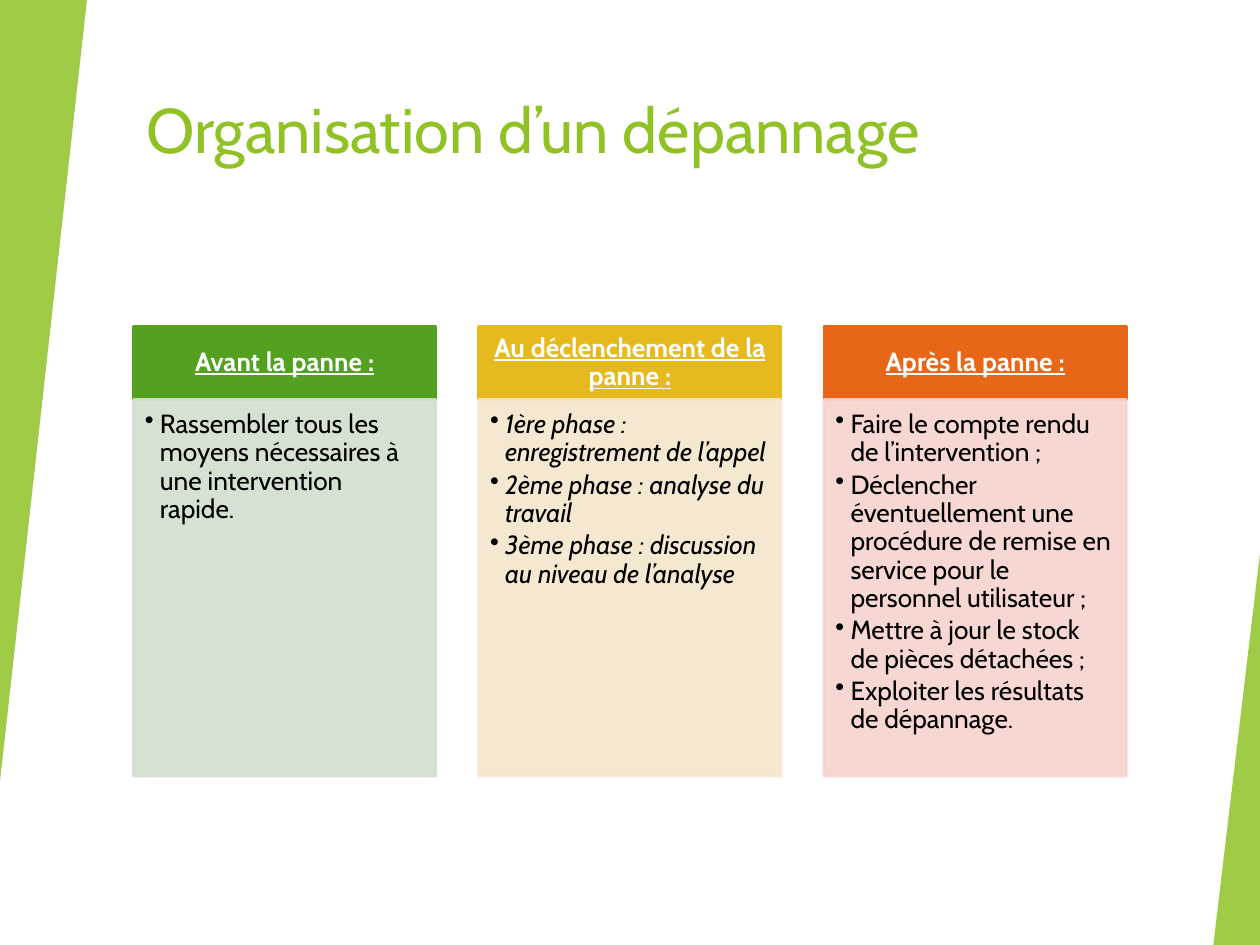
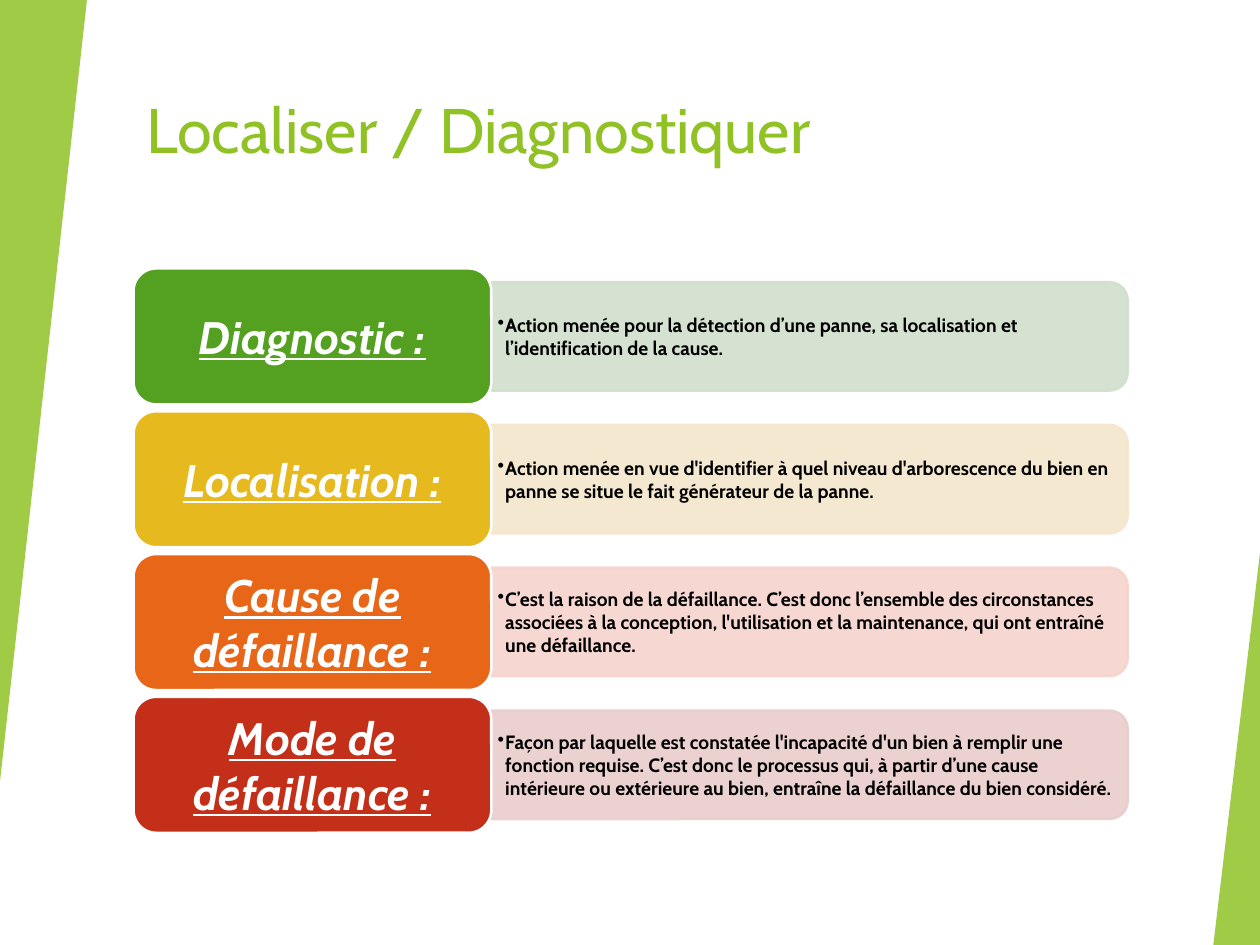
from dataclasses import dataclass

from lxml import etree
from pptx import Presentation
from pptx import util as u
from pptx.dml import color
from pptx.enum import shapes, text
from pptx.oxml import ns

KIND = shapes.MSO_SHAPE
ALIGN = text.PP_ALIGN
ANCHOR = text.MSO_ANCHOR


@dataclass(frozen=True)
class Theme:
    font: str = "Cabin"
    lime: str = "90C226"
    white: str = "FFFFFF"
    black: str = "000000"
    darks: tuple = ("54A021", "E6B91E", "E76618", "C42F1A")
    pales: tuple = ("D1DFCD", "F5E6CD", "F6D3CC", "EACDCD")
    title: int = 36
    card: int = 15
    term: int = 26
    note: int = 11
    edge: float = 1.5


T = Theme()

CARDS = [
    ("Avant la panne :", False,
     ["Rassembler tous les moyens nécessaires à une intervention rapide."]),
    ("Au déclenchement de la panne :", True,
     ["1ère phase : enregistrement de l’appel",
      "2ème phase : analyse du travail",
      "3ème phase : discussion au niveau de l’analyse"]),
    ("Après la panne :", False,
     ["Faire le compte rendu de l’intervention ;",
      "Déclencher éventuellement une procédure de remise en service "
      "pour le personnel utilisateur ;",
      "Mettre à jour le stock de pièces détachées ;",
      "Exploiter les résultats de dépannage."]),
]

TERMS = [
    ("Diagnostic :",
     "Action menée pour la détection d’une panne, sa localisation et "
     "l’identification de la cause."),
    ("Localisation :",
     "Action menée en vue d'identifier à quel niveau d'arborescence du bien "
     "en panne se situe le fait générateur de la panne."),
    ("Cause de défaillance :",
     "C’est la raison de la défaillance. C’est donc l’ensemble des "
     "circonstances associées à la conception, l'utilisation et la "
     "maintenance, qui ont entraîné une défaillance."),
    ("Mode de défaillance :",
     "Façon par laquelle est constatée l'incapacité d'un bien à remplir une "
     "fonction requise. C’est donc le processus qui, à partir d’une cause "
     "intérieure ou extérieure au bien, entraîne la défaillance du bien "
     "considéré."),
]


def place(box):
    return [u.Inches(v) for v in box]


def fade(fill, alpha):
    for clr in fill.iter(ns.qn("a:srgbClr")):
        etree.SubElement(clr, ns.qn("a:alpha"), val=str(alpha * 1000))


def draw(slide, kind, box, fill, line=None, alpha=None):
    shape = slide.shapes.add_shape(kind, *place(box))
    shape.shadow.inherit = False
    shape.fill.solid()
    shape.fill.fore_color.rgb = color.RGBColor.from_string(fill)
    if line:
        shape.line.color.rgb = color.RGBColor.from_string(line)
        shape.line.width = u.Pt(T.edge)
    else:
        shape.line.fill.background()
    if alpha:
        fade(shape._element.spPr, alpha)
    return shape


def write(shape, lines, size, ink, inset, align=ALIGN.LEFT,
          anchor=ANCHOR.MIDDLE, space=1, after=0, hang=0, **style):
    frame = shape.text_frame
    frame.word_wrap = True
    frame.auto_size = text.MSO_AUTO_SIZE.NONE
    frame.vertical_anchor = anchor
    (frame.margin_left, frame.margin_top,
     frame.margin_right, frame.margin_bottom) = place(inset)
    frame.text = "\n".join(lines)
    for para in frame.paragraphs:
        para.alignment = align
        para.line_spacing = space
        para.space_after = u.Pt(after)
        if hang:
            bullet(para, hang)
        for run in para.runs:
            run.font.name = T.font
            run.font.size = u.Pt(size)
            run.font.color.rgb = color.RGBColor.from_string(ink)
            for name, value in style.items():
                setattr(run.font, name, value)


def bullet(para, hang):
    props = para._p.get_or_add_pPr()
    props.set("marL", str(u.Inches(hang)))
    props.set("indent", str(-u.Inches(hang)))
    etree.SubElement(props, ns.qn("a:buChar"), char="•")


def frame(deck, title):
    slide = deck.slides.add_slide(deck.slide_layouts[5])
    head = slide.shapes.title
    head.left, head.top, head.width, head.height = place((1.06, 0.67, 8.36, 1.2))
    write(head, [title], T.title, T.lime, (0.1, 0.05, 0.1, 0.05),
          anchor=ANCHOR.TOP)
    for box, turn in (((0, 0, 0.69, 6.2), 180), ((9.63, 4.39, 0.37, 3.11), 0)):
        wedge = draw(slide, KIND.ISOSCELES_TRIANGLE, box, T.lime, alpha=85)
        wedge.adjustments[0] = 1
        wedge.rotation = turn
    return slide


def columns(slide, box, cards):
    left, top, width, height = box
    wide, head = 2.4, 0.58
    step = (width - wide) / (len(cards) - 1)
    for i, (name, slant, points) in enumerate(cards):
        x = left + i * step
        dark, pale = T.darks[i], T.pales[i]
        cap = draw(slide, KIND.RECTANGLE, (x, top, wide, head), dark, dark)
        write(cap, [name], T.card, T.white, (0.12, 0.07, 0.12, 0.07),
              ALIGN.CENTER, space=0.9, bold=True, underline=True)
        body = draw(slide, KIND.RECTANGLE, (x, top + head, wide, height - head),
                    pale, pale, 90)
        write(body, points, T.card, T.black, (0.09, 0.09, 0.12, 0.13),
              anchor=ANCHOR.TOP, space=0.9, after=0.15 * T.card, hang=0.12,
              italic=slant)


def rows(slide, box, terms):
    left, top, width, height = box
    wide, tall, thick = 2.84, 1.08, 0.86
    step = (height - tall) / (len(terms) - 1)
    span = width - wide
    for i, (name, note) in enumerate(terms):
        y = top + i * step
        x, mid = left + wide, y + tall / 2
        pale = T.pales[i]
        band = draw(slide, KIND.ROUND_2_SAME_RECTANGLE,
                    (x + (span - thick) / 2, mid - span / 2, thick, span),
                    pale, pale, 90)
        band.rotation = 90
        area = slide.shapes.add_textbox(*place((x, mid - 0.39, span - 0.04, 0.78)))
        write(area, [note], T.note, T.black, (0.05, 0.02, 0.05, 0.02),
              hang=0.06, bold=True)
        label = draw(slide, KIND.ROUNDED_RECTANGLE, (left, y, wide, tall),
                     T.darks[i], T.white)
        write(label, [name], T.term, T.white, (0.11, 0.05, 0.11, 0.05),
              ALIGN.CENTER, bold=True, italic=True, underline=True)


def main():
    deck = Presentation()
    deck.slide_width, deck.slide_height = place((10, 7.5))
    columns(frame(deck, "Organisation d’un dépannage"),
            (1.06, 2.59, 7.88, 3.57), CARDS)
    rows(frame(deck, "Localiser / Diagnostiquer"),
         (1.06, 2.13, 7.89, 4.48), TERMS)
    deck.save("out.pptx")


if __name__ == "__main__":
    main()
